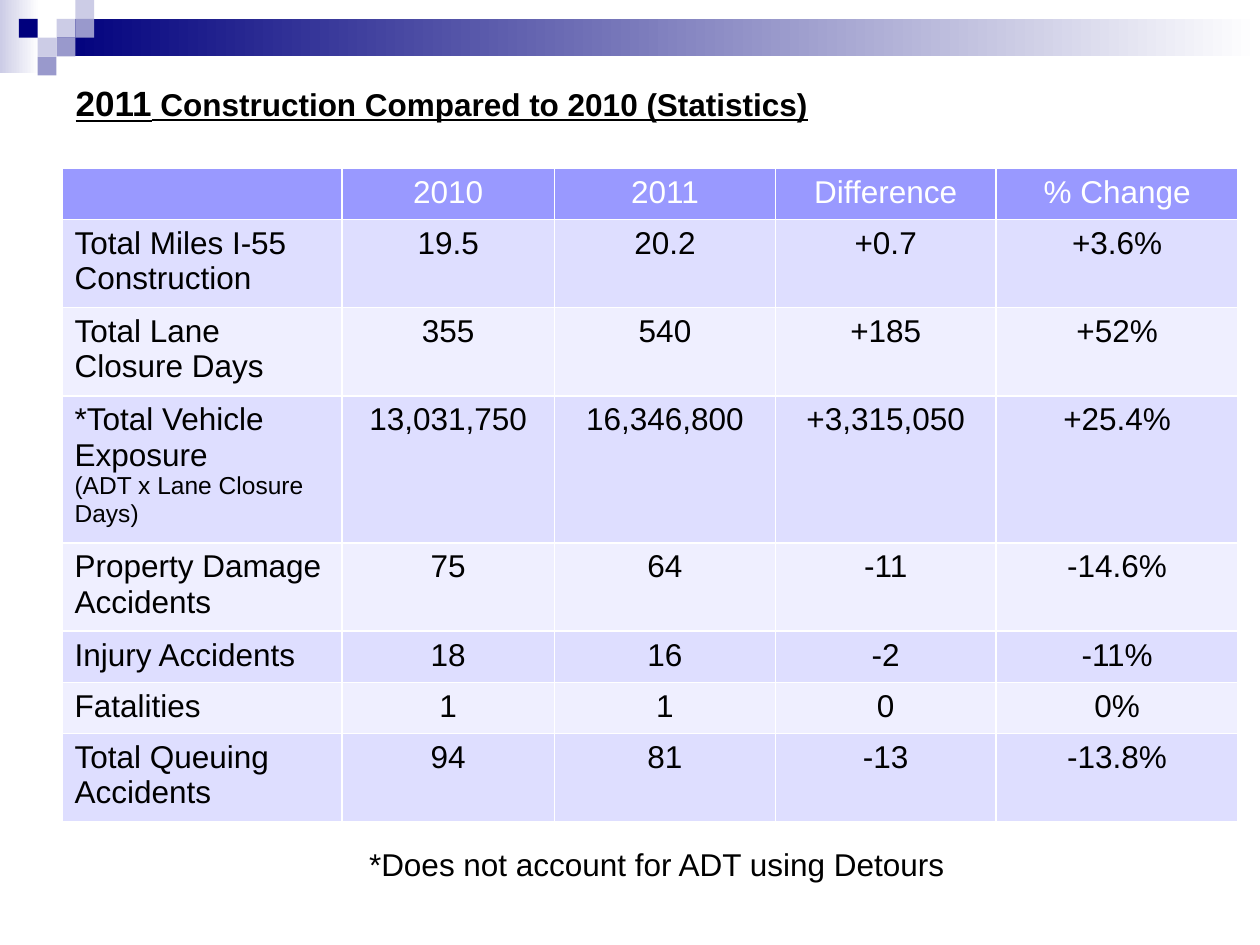
from dataclasses import dataclass

from pptx import Presentation
from pptx.dml.color import RGBColor
from pptx.enum.shapes import MSO_SHAPE
from pptx.enum.text import MSO_ANCHOR, MSO_AUTO_SIZE, PP_ALIGN
from pptx.shapes.autoshape import Shape
from pptx.slide import Slide
from pptx.table import _Cell
from pptx.text.text import Font, TextFrame
from pptx.util import Cm, Pt


@dataclass(frozen=True)
class Theme:
    """Colours, font and type sizes."""
    font: str = "Arial"
    black: str = "000000"
    white: str = "FFFFFF"
    navy: str = "00007D"
    pale: str = "CCCCE6"
    mid: str = "9999CC"
    head: str = "9999FF"
    odd: str = "DEDEFF"
    even: str = "EFEFFF"
    big: int = 20
    body: int = 18
    small: int = 14


@dataclass(frozen=True)
class Box:
    """A place and size in centimetres."""
    left: float
    top: float
    width: float
    height: float


@dataclass(frozen=True)
class Tile:
    """A square of the corner motif, by grid column and row."""
    col: int
    row: int
    tint: str


@dataclass(frozen=True)
class Fade:
    """A band that fades to white."""
    box: Box
    tint: str


@dataclass(frozen=True)
class Row:
    """A table row with its height in centimetres."""
    height: float
    label: str
    vals: tuple[str, ...]


LOOK = Theme()
STEP = 0.38
ONE, TWO, FOUR = 1.03, 1.78, 2.96

FADES = (
    Fade(Box(0, 0, 0.79, 1.47), LOOK.pale),
    Fade(Box(3 * STEP, STEP, 24.26, 2 * STEP), LOOK.navy),
)
TILES = (
    Tile(3, 1, LOOK.pale), Tile(4, 0, LOOK.pale), Tile(4, 1, LOOK.mid),
    Tile(2, 2, LOOK.pale), Tile(1, 1, LOOK.navy), Tile(3, 2, LOOK.mid),
    Tile(2, 3, LOOK.mid),
)
COLS = (5.64, 4.29, 4.45, 4.45, 4.88)
ROWS = (
    Row(ONE, "", ("2010", "2011", "Difference", "% Change")),
    Row(TWO, "Total Miles I-55 Construction", ("19.5", "20.2", "+0.7", "+3.6%")),
    Row(TWO, "Total Lane Closure Days", ("355", "540", "+185", "+52%")),
    Row(FOUR, "*Total Vehicle Exposure\n(ADT x Lane Closure Days)",
        ("13,031,750", "16,346,800", "+3,315,050", "+25.4%")),
    Row(TWO, "Property Damage Accidents", ("75", "64", "-11", "-14.6%")),
    Row(ONE, "Injury Accidents", ("18", "16", "-2", "-11%")),
    Row(ONE, "Fatalities", ("1", "1", "0", "0%")),
    Row(TWO, "Total Queuing Accidents", ("94", "81", "-13", "-13.8%")),
)


def spots(box: Box) -> tuple[Cm, Cm, Cm, Cm]:
    """Turn a box into lengths."""
    return Cm(box.left), Cm(box.top), Cm(box.width), Cm(box.height)


def rgb(tint: str) -> RGBColor:
    """Turn a hex string into a colour."""
    return RGBColor.from_string(tint)


def style(font: Font, size: int, tint: str = LOOK.black) -> None:
    """Set the face, size and colour of a font."""
    font.name = LOOK.font
    font.size = Pt(size)
    font.color.rgb = rgb(tint)


def add_rect(slide: Slide, box: Box) -> Shape:
    """Add a plain rectangle with no line or shadow."""
    rect = slide.shapes.add_shape(MSO_SHAPE.RECTANGLE, *spots(box))
    rect.shadow.inherit = False
    rect.line.fill.background()
    return rect


def add_fade(slide: Slide, fade: Fade) -> None:
    """Draw a band that fades from left to right."""
    fill = add_rect(slide, fade.box).fill
    fill.gradient()
    fill.gradient_angle = 0
    for stop, tint in zip(fill.gradient_stops, (fade.tint, LOOK.white)):
        stop.color.rgb = rgb(tint)


def add_tile(slide: Slide, tile: Tile) -> None:
    """Draw one square of the motif."""
    fill = add_rect(slide, Box(tile.col * STEP, tile.row * STEP, STEP, STEP)).fill
    fill.solid()
    fill.fore_color.rgb = rgb(tile.tint)


def fit(frame: TextFrame) -> None:
    """Let a frame grow with its unwrapped text."""
    frame.word_wrap = False
    frame.auto_size = MSO_AUTO_SIZE.SHAPE_TO_FIT_TEXT
    frame.vertical_anchor = MSO_ANCHOR.TOP


def set_title(slide: Slide, box: Box) -> None:
    """Place and fill the title."""
    title = slide.shapes.title
    title.left, title.top, title.width, title.height = spots(box)
    fit(title.text_frame)
    para = title.text_frame.paragraphs[0]
    para.alignment = PP_ALIGN.LEFT
    style(para.font, LOOK.body)
    para.font.bold = para.font.underline = True
    for text, size in (("2011", LOOK.big),
                       (" Construction Compared to 2010 (Statistics)", LOOK.body)):
        run = para.add_run()
        run.text = text
        run.font.size = Pt(size)


def fill_cell(cell: _Cell, text: str, fill: str, tint: str, align: PP_ALIGN) -> None:
    """Write and paint one cell; lines after the first are small."""
    cell.fill.solid()
    cell.fill.fore_color.rgb = rgb(fill)
    cell.text = text
    for num, para in enumerate(cell.text_frame.paragraphs):
        para.alignment = align
        style(para.font, LOOK.small if num else LOOK.body, tint)
        para.font.bold = False


def add_grid(slide: Slide, left: float, top: float) -> None:
    """Draw the table of statistics."""
    box = Box(left, top, sum(COLS), sum(row.height for row in ROWS))
    table = slide.shapes.add_table(len(ROWS), len(COLS), *spots(box)).table
    for col, width in zip(table.columns, COLS):
        col.width = Cm(width)
    for num, row in enumerate(ROWS):
        table.rows[num].height = Cm(row.height)
        fill = (LOOK.odd if num % 2 else LOOK.even) if num else LOOK.head
        tint = LOOK.black if num else LOOK.white
        for col, text in enumerate((row.label, *row.vals)):
            align = PP_ALIGN.CENTER if col else PP_ALIGN.LEFT
            fill_cell(table.cell(num, col), text, fill, tint, align)


def add_note(slide: Slide, text: str, box: Box) -> None:
    """Add the note below the table."""
    frame = slide.shapes.add_textbox(*spots(box)).text_frame
    fit(frame)
    frame.text = text
    style(frame.paragraphs[0].font, LOOK.body)


def main() -> None:
    """Build and save the slide."""
    deck = Presentation()
    deck.slide_width, deck.slide_height = Cm(25.4), Cm(19.05)
    slide = deck.slides.add_slide(deck.slide_layouts[5])
    for fade in FADES:
        add_fade(slide, fade)
    for tile in TILES:
        add_tile(slide, tile)
    set_title(slide, Box(1.27, 1.52, 16.03, 1.12))
    add_grid(slide, 1.25, 3.39)
    add_note(slide, "*Does not account for ADT using Detours",
             Box(7.19, 16.92, 13.44, 1.02))
    deck.save("out.pptx")


if __name__ == "__main__":
    main()
